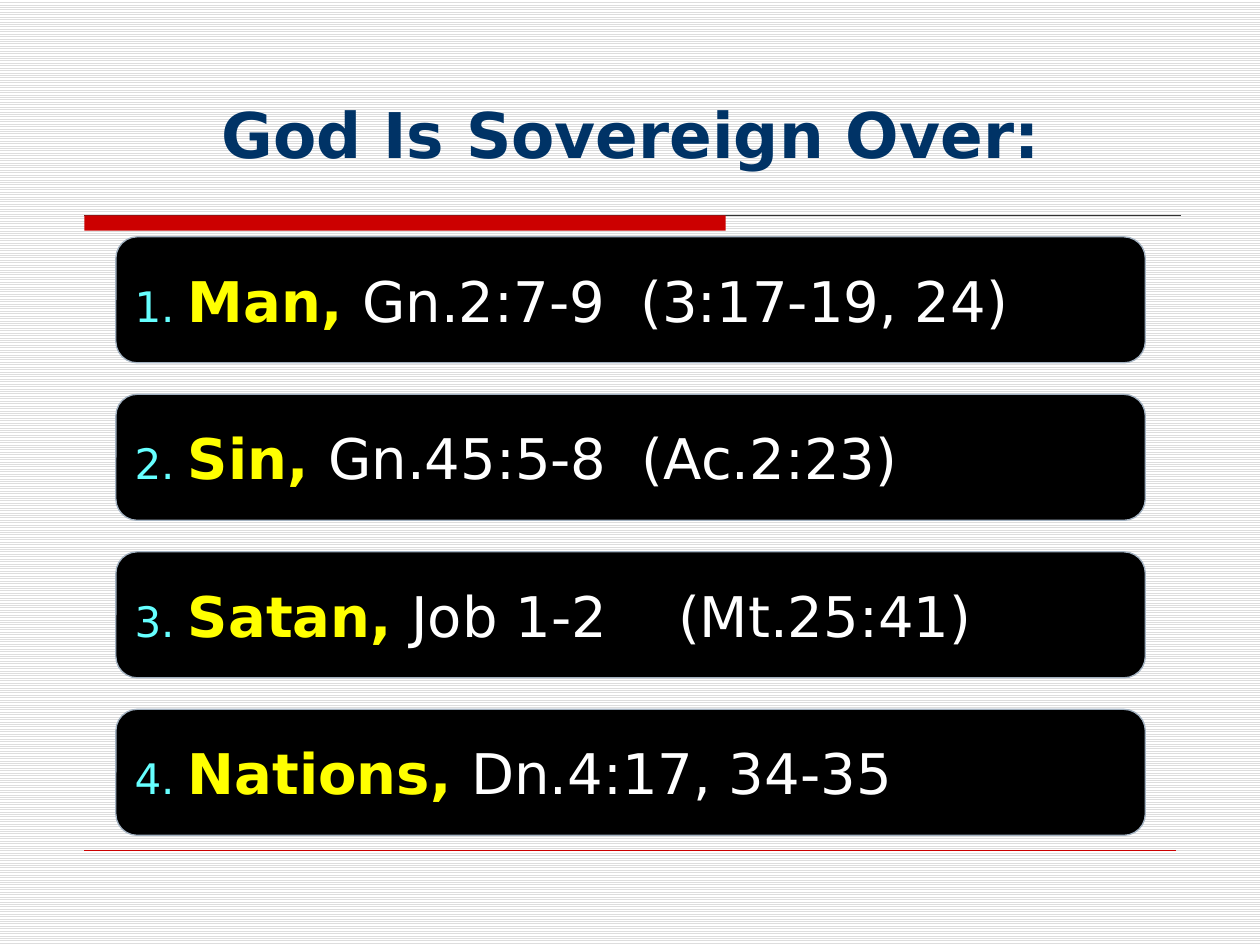
from lxml import etree
from pptx import Presentation
from pptx.dml.color import RGBColor
from pptx.enum.dml import MSO_PATTERN
from pptx.enum.shapes import MSO_CONNECTOR, MSO_SHAPE
from pptx.enum.text import MSO_ANCHOR, MSO_AUTO_SIZE, PP_ALIGN
from pptx.oxml.ns import qn
from pptx.util import Inches, Pt

STRIPES = MSO_PATTERN.LIGHT_HORIZONTAL
STRAIGHT = MSO_CONNECTOR.STRAIGHT
RECTANGLE, ROUNDED = MSO_SHAPE.RECTANGLE, MSO_SHAPE.ROUNDED_RECTANGLE
MIDDLE, BOTTOM = MSO_ANCHOR.MIDDLE, MSO_ANCHOR.BOTTOM
NO_FIT = MSO_AUTO_SIZE.NONE
LEFT, CENTER = PP_ALIGN.LEFT, PP_ALIGN.CENTER

FONT = "DejaVu Sans"
NAVY, RED, DARK = "003366", "CC0000", "333333"
BLACK, WHITE, GRAY, EDGE = "000000", "FFFFFF", "DDDDDD", "A3B2C1"
CYAN, YELLOW = "66FFFF", "FFFF00"

REALMS = [
    ("Man", "Gn.2:7-9  (3:17-19, 24)"),
    ("Sin", "Gn.45:5-8  (Ac.2:23)"),
    ("Satan", "Job 1-2    (Mt.25:41)"),
    ("Nations", "Dn.4:17, 34-35"),
]
FIRST_TOP, ROW_STEP = 1.88, 1.25


def rgb(color):
    return RGBColor.from_string(color)


def add_text(paragraph, text, size=32, color=WHITE, bold=False):
    run = paragraph.add_run()
    run.text = text
    run.font.name = FONT
    run.font.size = Pt(size)
    run.font.bold = bold
    run.font.color.rgb = rgb(color)


def add_box(slide, kind, left, top, width, height, fill, edge=None):
    box = slide.shapes.add_shape(
        kind, Inches(left), Inches(top), Inches(width), Inches(height))
    box.shadow.inherit = False
    box.fill.solid()
    box.fill.fore_color.rgb = rgb(fill)
    if edge:
        box.line.color.rgb = rgb(edge)
        box.line.width = Pt(0.75)
    else:
        box.line.fill.background()
    return box


def add_rule(slide, left, right, y, color, width):
    rule = slide.shapes.add_connector(
        STRAIGHT, Inches(left), Inches(y), Inches(right), Inches(y))
    rule.line.color.rgb = rgb(color)
    rule.line.width = Pt(width)
    etree.SubElement(rule._element.spPr, qn("a:effectLst"))


def set_background(slide):
    fill = slide.background.fill
    fill.patterned()
    fill.pattern = STRIPES
    fill.fore_color.rgb = rgb(GRAY)
    fill.back_color.rgb = rgb(WHITE)


def set_title(slide, text):
    title = slide.shapes.title
    title.left, title.top = Inches(0.63), Inches(0.08)
    title.width, title.height = Inches(8.75), Inches(1.33)
    frame = title.text_frame
    frame.auto_size = NO_FIT
    frame.vertical_anchor = BOTTOM
    heading = frame.paragraphs[0]
    heading.alignment = CENTER
    add_text(heading, text, size=36, color=NAVY, bold=True)


def add_realm(slide, number, realm, verses):
    top = FIRST_TOP + (number - 1) * ROW_STEP
    bar = add_box(slide, ROUNDED, 0.92, top, 8.17, 1, BLACK, EDGE)
    bar.adjustments[0] = 0.17
    frame = bar.text_frame
    frame.word_wrap = True
    frame.vertical_anchor = MIDDLE
    line = frame.paragraphs[0]
    line.alignment = LEFT
    add_text(line, f"{number}. ", size=24, color=CYAN)
    add_text(line, f"{realm}, ", color=YELLOW, bold=True)
    add_text(line, verses)


def main():
    prs = Presentation()
    prs.slide_width, prs.slide_height = Inches(10), Inches(7.5)
    slide = prs.slides.add_slide(prs.slide_layouts[5])
    set_background(slide)

    # Title with the red band and rule under it, and the footer rule
    set_title(slide, "God Is Sovereign Over:")
    add_rule(slide, 0.67, 9.37, 1.71, DARK, 0.75)
    add_box(slide, RECTANGLE, 0.67, 1.71, 5.09, 0.12, RED)
    add_rule(slide, 0.67, 9.33, 6.75, RED, 0.25)

    # Numbered bars
    for number, (realm, verses) in enumerate(REALMS, start=1):
        add_realm(slide, number, realm, verses)

    prs.save("out.pptx")


if __name__ == "__main__":
    main()
